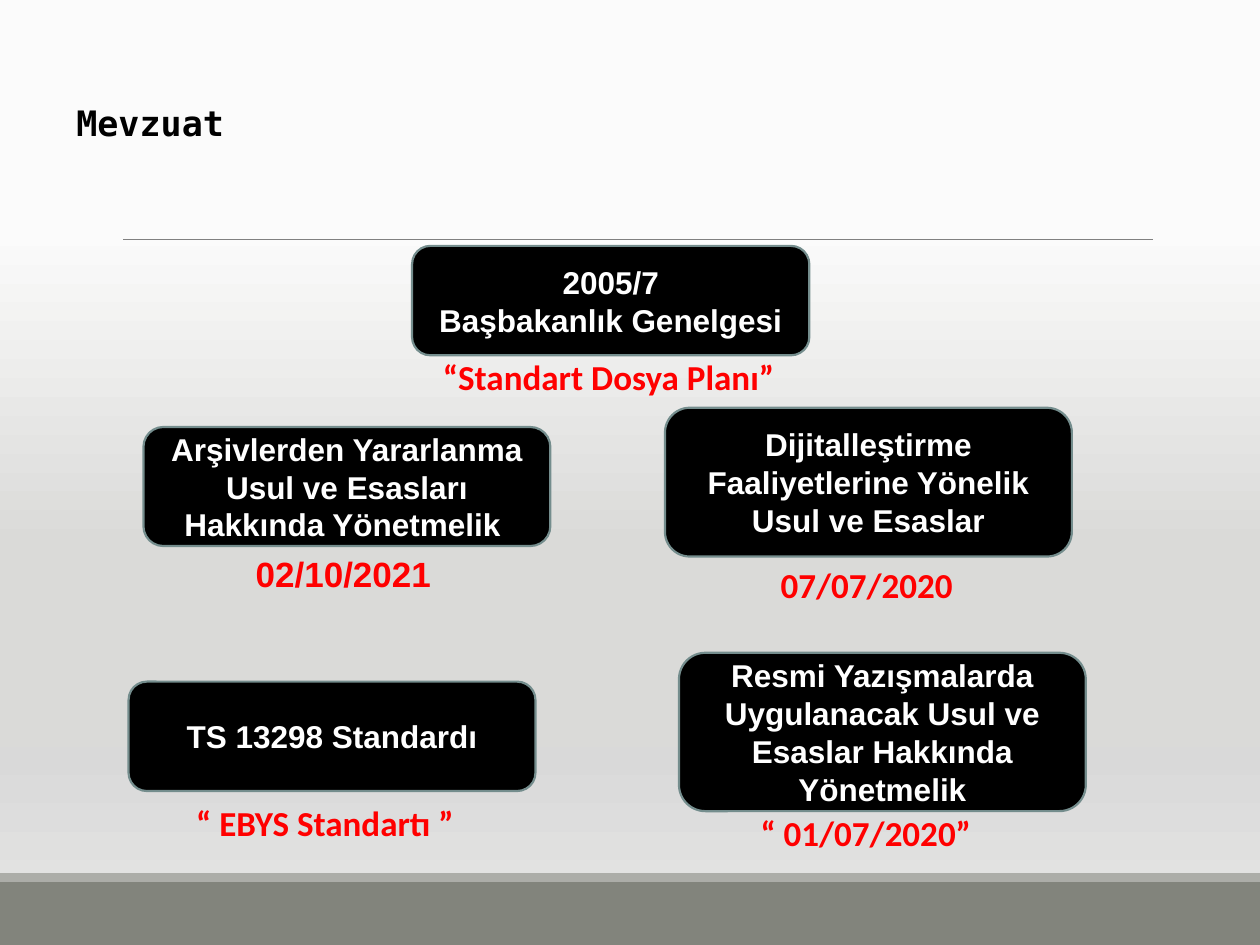
from lxml.etree import SubElement
from pptx import Presentation
from pptx.dml.color import RGBColor
from pptx.enum.shapes import MSO_CONNECTOR, MSO_SHAPE
from pptx.enum.text import MSO_ANCHOR, PP_ALIGN
from pptx.oxml.ns import qn
from pptx.util import Pt

COLORS = {
    "text": "000000", "card": "000000", "edge": "748D8D", "label": "FFFFFF",
    "note": "FF0000", "rule": "808080", "band": "82847C", "strip": "ACADA8",
}
STOPS = [(24, "FBFBFB"), (58, "DADAD8"), (79, "D9D9D9"), (100, "E6E6E5")]
WIDE, HIGH = 720, 540

# Card box, card lines, note box, note text, note font
CARDS = [
    ((235.5, 140.5, 227, 62.5), ["2005/7", "Başbakanlık Genelgesi"],
     (246, 199.5, 214.5, 31.5), "“Standart Dosya Planı”", "Calibri"),
    ((82, 244, 232.5, 68),
     ["Arşivlerden Yararlanma Usul ve Esasları Hakkında Yönetmelik "],
     (139, 312, 115, 31.5), "02/10/2021", "Arial"),
    ((380, 233, 232.5, 85),
     ["Dijitalleştirme Faaliyetlerine Yönelik Usul ve Esaslar"],
     (439, 318.5, 125.5, 31.5), "07/07/2020", "Calibri"),
    ((73.5, 389.5, 232.5, 62.5), ["TS 13298 Standardı"],
     (105, 454.5, 170, 31.5), "“ EBYS Standartı ”", "Calibri"),
    ((388, 373, 232.5, 90.5),
     ["Resmi Yazışmalarda Uygulanacak Usul ve Esaslar Hakkında Yönetmelik"],
     (427.5, 460, 137, 31.5), "“ 01/07/2020”", "Calibri"),
]


def rgb(name):
    return RGBColor.from_string(COLORS[name])


def add_run(para, text, font, size, color):
    run = para.add_run()
    run.text = text
    run.font.name = font
    run.font.size = Pt(size)
    run.font.bold = True
    run.font.color.rgb = rgb(color)


def add_block(slide, kind, box, color):
    shape = slide.shapes.add_shape(kind, *map(Pt, box))
    shape.shadow.inherit = False
    shape.fill.solid()
    shape.fill.fore_color.rgb = rgb(color)
    shape.line.fill.background()
    return shape


def add_text(slide, box, text, font, color, wrap=False):
    frame = slide.shapes.add_textbox(*map(Pt, box)).text_frame
    frame.word_wrap = wrap
    add_run(frame.paragraphs[0], text, font, 20, color)


def add_back(slide):
    fill = slide.background.fill
    fill.gradient()
    fill.gradient_angle = 270
    # The stop list needs XML to hold more than two stops
    stops = next(slide.background._cSld.iter(qn("a:gsLst")))
    for stop in list(stops):
        stops.remove(stop)
    for pos, color in STOPS:
        stop = SubElement(stops, qn("a:gs"), pos=str(pos * 1000))
        SubElement(stop, qn("a:srgbClr"), val=color)


def add_foot(slide, box):
    left, top, width, height = box
    strip = 5
    add_block(slide, MSO_SHAPE.RECTANGLE,
              (left, top + strip, width, height - strip), "band")
    add_block(slide, MSO_SHAPE.RECTANGLE, (left, top, width, strip), "strip")


def add_head(slide, box):
    left, top, width, height = box
    base = top + height
    rule = slide.shapes.add_connector(
        MSO_CONNECTOR.STRAIGHT, Pt(left + 34), Pt(base),
        Pt(left + width), Pt(base))
    rule.line.color.rgb = rgb("rule")
    rule.line.width = Pt(0.5)
    SubElement(rule._element.spPr, qn("a:effectLst"))
    add_text(slide, (left, top, 408, 31.5), "Mevzuat",
             "DejaVu Sans Mono", "text", True)


def add_card(slide, box, lines):
    card = add_block(slide, MSO_SHAPE.ROUNDED_RECTANGLE, box, "card")
    card.line.color.rgb = rgb("edge")
    card.line.width = Pt(1.25)
    frame = card.text_frame
    frame.word_wrap = True
    frame.vertical_anchor = MSO_ANCHOR.MIDDLE
    frame.margin_top = frame.margin_bottom = 0
    for i, line in enumerate(lines):
        para = frame.add_paragraph() if i else frame.paragraphs[0]
        para.alignment = PP_ALIGN.CENTER
        add_run(para, line, "Arial", 18, "label")


def main():
    deck = Presentation()
    deck.slide_width, deck.slide_height = Pt(WIDE), Pt(HIGH)
    slide = deck.slides.add_slide(deck.slide_layouts[6])
    # Backdrop and footer
    add_back(slide)
    add_foot(slide, (0, 499, WIDE, HIGH - 499))
    # Title and rule
    add_head(slide, (36.5, 54.5, 622.5, 82.5))
    # Cards with their red notes
    for box, lines, spot, note, font in CARDS:
        add_card(slide, box, lines)
        add_text(slide, spot, note, font, "note")
    deck.save("out.pptx")


if __name__ == "__main__":
    main()
